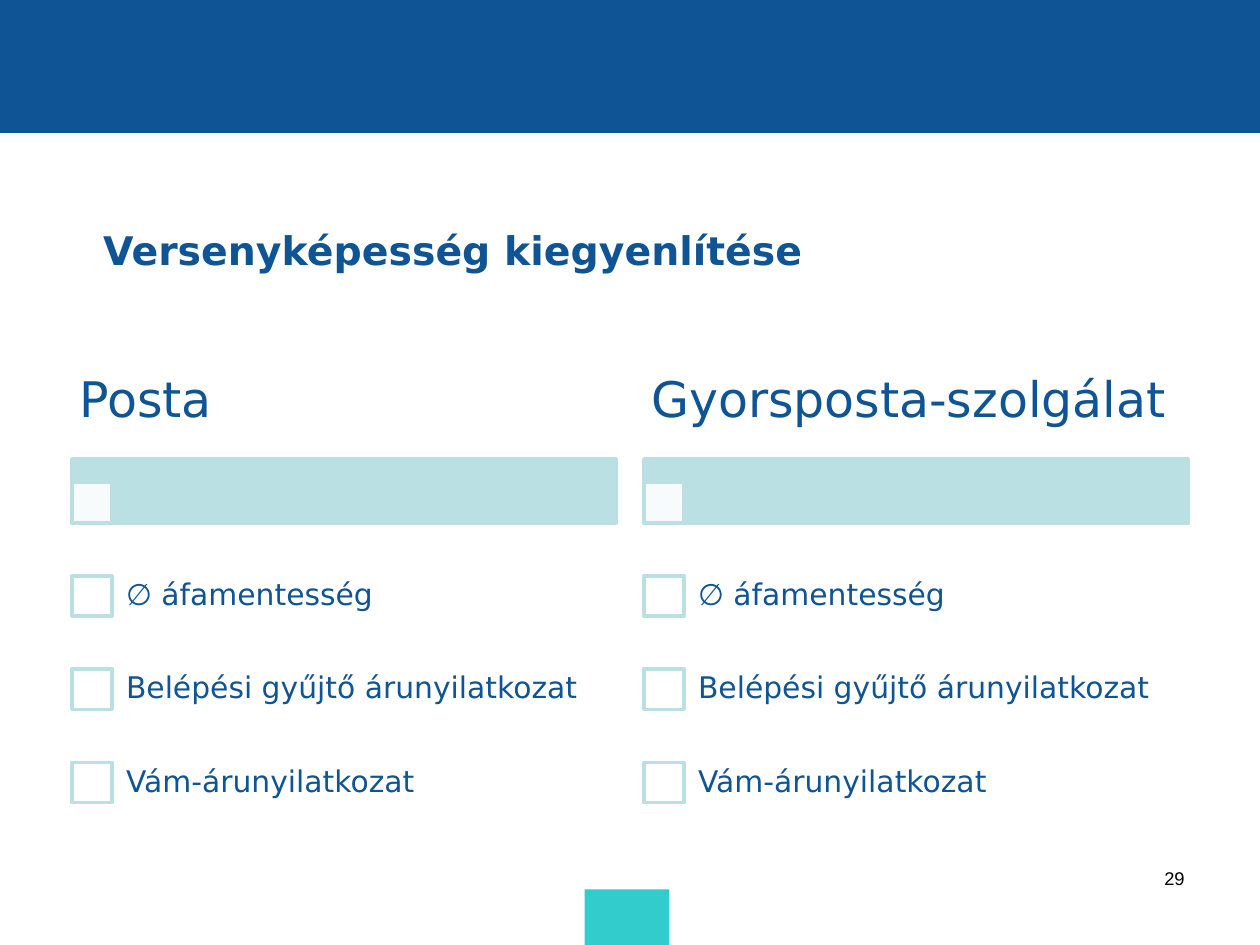
import pptx
import pptx.util
import pptx.dml.color
import pptx.enum.shapes
import pptx.enum.text
import pptx.oxml.ns
from lxml import etree

RGBColor = pptx.dml.color.RGBColor
Pt = pptx.util.Pt
ANCHOR = pptx.enum.text.MSO_ANCHOR
ALIGN = pptx.enum.text.PP_ALIGN

BLUE = RGBColor(0x0F, 0x54, 0x94)
PALE = RGBColor(0xBB, 0xE0, 0xE3)
TEAL = RGBColor(0x33, 0xCC, 0xCC)
WHITE = RGBColor(0xFF, 0xFF, 0xFF)
BLACK = RGBColor(0x00, 0x00, 0x00)

# The slide is a grid of 100 columns by 75 rows; all lengths are in cells.
COLS, ROWS = 100, 75
CELL = pptx.util.Inches(0.1)

FONT = "DejaVu Sans"
ITEMS = ["∅ áfamentesség", "Belépési gyűjtő árunyilatkozat", "Vám-árunyilatkozat"]
HEADING_H = 9.1
BAR_H = 5.1
ITEMS_GAP = 2.1
ITEM_H = 7.4
CHECK = 3.2
LABEL_INDENT = 3


def cells(*lengths):
    return [round(n * CELL) for n in lengths]


def add_rect(s, box, fill, line=None, line_pt=2, opacity=None):
    sp = s.shapes.add_shape(pptx.enum.shapes.MSO_SHAPE.RECTANGLE, *cells(*box))
    sp.shadow.inherit = False
    sp.fill.solid()
    sp.fill.fore_color.rgb = fill
    if opacity is not None:
        color = sp.fill._xPr.find(".//" + pptx.oxml.ns.qn("a:srgbClr"))
        etree.SubElement(color, pptx.oxml.ns.qn("a:alpha"), val=str(opacity * 1000))
    if line is None:
        sp.line.fill.background()
    else:
        sp.line.color.rgb = line
        sp.line.width = Pt(line_pt)


def add_text(s, box, text, size, color=BLUE, font=FONT, bold=False,
             anchor=ANCHOR.MIDDLE, align=ALIGN.LEFT, inset=(1, 0.5), spacing=None):
    tf = s.shapes.add_textbox(*cells(*box)).text_frame
    tf.word_wrap = True
    tf.vertical_anchor = anchor
    tf.margin_left = tf.margin_right = round(inset[0] * CELL)
    tf.margin_top = tf.margin_bottom = round(inset[1] * CELL)
    p = tf.paragraphs[0]
    p.text = text
    p.alignment = align
    p.line_spacing = spacing
    f = p.runs[0].font
    f.name, f.size, f.bold = font, Pt(size), bold
    f.color.rgb = color


def add_frame(s, box):
    """Draw the top band and the footer tab."""
    left, top, width, height = box
    add_rect(s, (left, top, width, 10.5), BLUE, BLUE, 0.75)
    add_rect(s, (left + 46.4, top + height - 4.4, 6.7, 4.7), TEAL)


def add_checklist(s, box, heading, items):
    left, top, width, _ = box
    add_text(s, (left, top, width, HEADING_H), heading, 28,
             inset=(0.6, 0.4), spacing=0.9)

    bar_top = top + HEADING_H
    bar_bottom = bar_top + BAR_H
    add_rect(s, (left, bar_top, width, BAR_H), PALE, PALE)
    add_rect(s, (left, bar_bottom - CHECK, CHECK, CHECK), WHITE, PALE, opacity=90)

    for i, item in enumerate(items):
        y = bar_bottom + ITEMS_GAP + i * ITEM_H
        add_rect(s, (left, y + (ITEM_H - CHECK) / 2, CHECK, CHECK), WHITE, PALE)
        add_text(s, (left + LABEL_INDENT, y, width - LABEL_INDENT, ITEM_H), item, 17,
                 inset=(1.3, 1.3), spacing=0.9)


def main():
    prs = pptx.Presentation()
    prs.slide_width, prs.slide_height = cells(COLS, ROWS)
    s = prs.slides.add_slide(prs.slide_layouts[6])

    add_frame(s, (0, 0, COLS, ROWS))
    add_text(s, (7.2, 14.7, 87.1, 10.2), "Versenyképesség kiegyenlítése", 22.5, bold=True)
    for i, heading in enumerate(["Posta", "Gyorsposta-szolgálat"]):
        add_checklist(s, (5.7 + i * 45.4, 27.3, 43.2, 38.5), heading, ITEMS)
    add_text(s, (71.7, 68.3, 23.3, 5.2), "29", 10.5, BLACK, "Arial",
             anchor=ANCHOR.TOP, align=ALIGN.RIGHT)

    prs.save("out.pptx")


if __name__ == "__main__":
    main()
